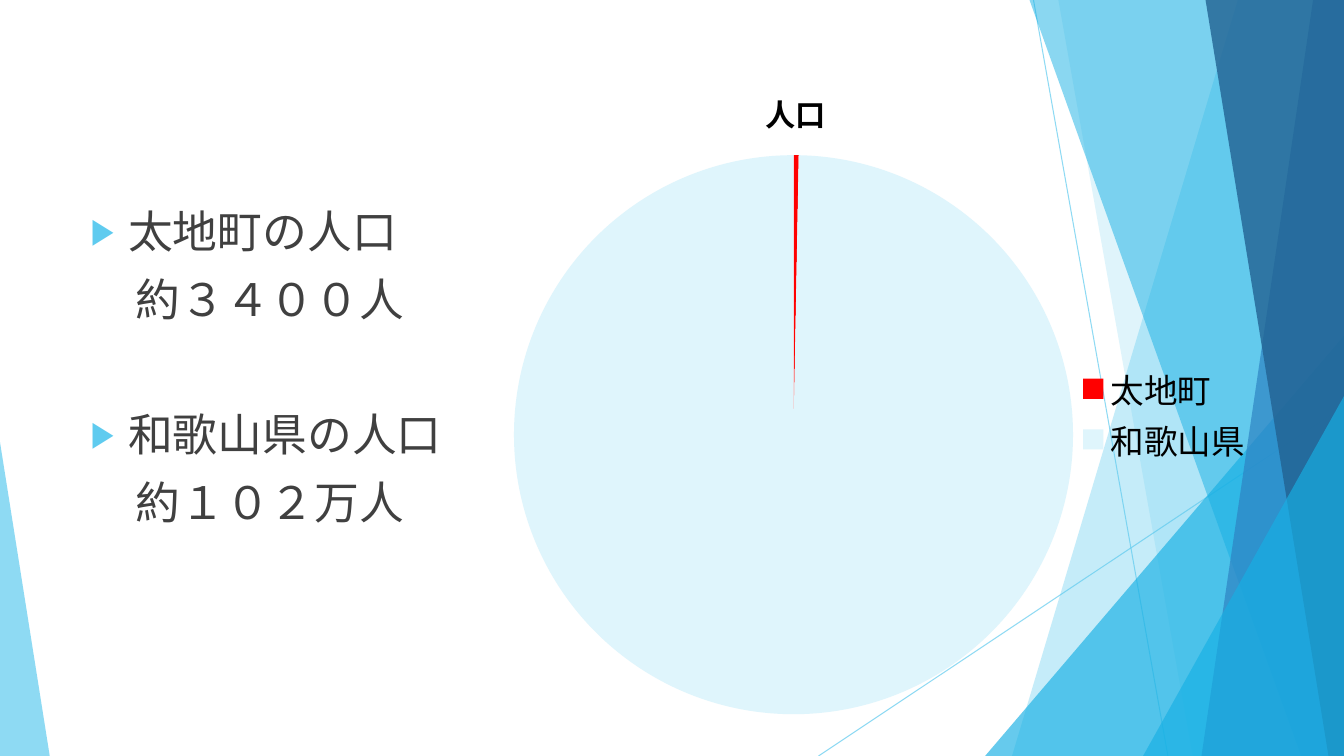
"""Build a slide comparing the population of a town with its prefecture."""
from lxml import etree
from pptx import Presentation
from pptx import util as u
from pptx.chart.data import CategoryChartData
from pptx.dml.color import RGBColor
from pptx.enum import chart as charts, shapes, text
from pptx.oxml.ns import qn

COLORS = {
    "sky": "5FCBEF", "cyan": "17B0E4", "blue": "2E83C3", "navy": "226292",
    "text": "404040", "black": "000000", "town": "FF0000", "prefecture": "DFF5FC",
}
FONT = "Cabin"


def color(name):
    return RGBColor.from_string(COLORS[name])


def add_xml(parent, tag, **attributes):
    return etree.SubElement(parent, qn(tag), attributes)


deck = Presentation()
deck.slide_width, deck.slide_height = u.Inches(13.333), u.Inches(7.5)
COL, ROW = deck.slide_width / 100, deck.slide_height / 100
page = deck.slides.add_slide(deck.slide_layouts[1])
title, body = page.placeholders
title.element.getparent().remove(title.element)

# Thin lines: start column, start row, end column, end row
for x1, y1, x2, y2 in [(76.9, 0, 86.9, 100), (100, 53.7, 60.9, 100)]:
    line = page.shapes.add_connector(
        shapes.MSO_CONNECTOR.STRAIGHT,
        round(x1 * COL), round(y1 * ROW), round(x2 * COL), round(y2 * ROW))
    line.line.width = u.Pt(0.75)
    line.line.color.rgb = color("sky")
    add_xml(next(line.element.spPr.iter(qn("a:srgbClr"))), "a:alpha", val="70000")
    add_xml(line.element.spPr, "a:effectLst")

# Slants: top and bottom column of the left edge; peaks: left, width, top, tip
facets = [
    ("slant", (92.1, 75.3), "sky", 36),
    ("slant", (78.75, 88.75), "sky", 20),
    ("peak", (73.3, 26.7, 44.4, 1), "cyan", 66),
    ("slant", (76.6, 96.8), "cyan", 50),
    ("slant", (97.7, 89.4), "blue", 70),
    ("slant", (89.7, 98.85), "navy", 80),
    ("peak", (85.05, 14.95, 52.4, 1), "cyan", 66),
    ("peak", (0, 3.7, 58.5, 0), "sky", 70),
]
for kind, place, name, opacity in facets:
    if kind == "slant":
        top, bottom = (x * COL for x in place)
        outline = page.shapes.build_freeform(top, 0)
        outline.add_line_segments(
            [(100 * COL, 0), (100 * COL, 100 * ROW), (bottom, 100 * ROW)])
        facet = outline.convert_to_shape()
    else:
        left, width, top, tip = place
        facet = page.shapes.add_shape(
            shapes.MSO_SHAPE.ISOSCELES_TRIANGLE, round(left * COL),
            round(top * ROW), round(width * COL), round((100 - top) * ROW))
        facet.adjustments[0] = tip
    facet.shadow.inherit = False
    facet.line.fill.background()
    facet.fill.solid()
    facet.fill.fore_color.rgb = color(name)
    add_xml(next(facet.element.spPr.iter(qn("a:srgbClr"))),
            "a:alpha", val=str(opacity * 1000))

body.element.getparent().append(body.element)
body.left, body.top = round(6 * COL), round(8.3 * ROW)
body.width, body.height = round(48.5 * COL), round(81.6 * ROW)
frame = body.text_frame
frame.auto_size = text.MSO_AUTO_SIZE.NONE
frame.vertical_anchor = text.MSO_ANCHOR.TOP
frame.margin_top = round(18.7 * ROW)
frame.text = "太地町の人口\n　約３４００人\n和歌山県の人口\n　約１０２万人"
for para, gap, bulleted in zip(frame.paragraphs, (10, 10, 58, 10), (1, 0, 1, 0)):
    para.space_before = u.Pt(gap)
    para.alignment = text.PP_ALIGN.LEFT
    span = para.runs[0]
    span.font.size, span.font.name = u.Pt(32), FONT
    span.font.color.rgb = color("text")
    props = para._p.get_or_add_pPr()
    indent = u.Inches(0.37) if bulleted else 0
    props.set("marL", str(indent))
    props.set("indent", str(-indent))
    if bulleted:
        add_xml(add_xml(props, "a:buClr"), "a:srgbClr", val=COLORS["sky"])
        add_xml(props, "a:buSzPct", val="80000")
        add_xml(props, "a:buChar", char="▶")
    else:
        add_xml(props, "a:buNone")

data = CategoryChartData()
data.categories = ["太地町", "和歌山県"]
data.add_series("人口", [0.3, 100])
chart = page.shapes.add_chart(
    charts.XL_CHART_TYPE.PIE, round(37.95 * COL), round(10 * ROW),
    round(55.95 * COL), round(85.6 * ROW), data).chart
chart.font.size, chart.font.name = u.Pt(18), FONT
chart.font.color.rgb = color("black")

chart.has_title = True
chart.chart_title.text_frame.text = "人口"
heading = chart.chart_title.text_frame.paragraphs[0].runs[0].font
heading.size, heading.bold, heading.name = u.Pt(21.6), True, FONT
heading.color.rgb = color("black")

chart.has_legend = True
chart.legend.position = charts.XL_LEGEND_POSITION.RIGHT
chart.legend.include_in_layout = False
chart.legend.font.size, chart.legend.font.name = u.Pt(24), FONT
chart.legend.font.color.rgb = color("black")

pie = chart.plots[0]
pie.vary_by_categories = True
for index, name in enumerate(("town", "prefecture")):
    fill = pie.series[0].points[index].format.fill
    fill.solid()
    fill.fore_color.rgb = color(name)

# Places inside the chart, in percent: left, top, width, height
chart_parts = [
    ("c:title", "c:tx", (33.2, 1)),
    ("c:plotArea", None, (0.5, 12.3, 74.4, 86.4)),
    ("c:legend", "c:legendPos", (75, 44.3, 24, 16)),
]
for tag, before, place in chart_parts:
    part = next(chart.element.iter(qn(tag)))
    for old in part.findall(qn("c:layout")):
        part.remove(old)
    layout = etree.Element(qn("c:layout"))
    part.insert(part.index(part.find(qn(before))) + 1 if before else 0, layout)
    manual = add_xml(layout, "c:manualLayout")
    if tag == "c:plotArea":
        add_xml(manual, "c:layoutTarget", val="inner")
    for mode in ("c:xMode", "c:yMode"):
        add_xml(manual, mode, val="edge")
    for side, share in zip("xywh", place):
        add_xml(manual, f"c:{side}", val=str(share / 100))

deck.save("out.pptx")
